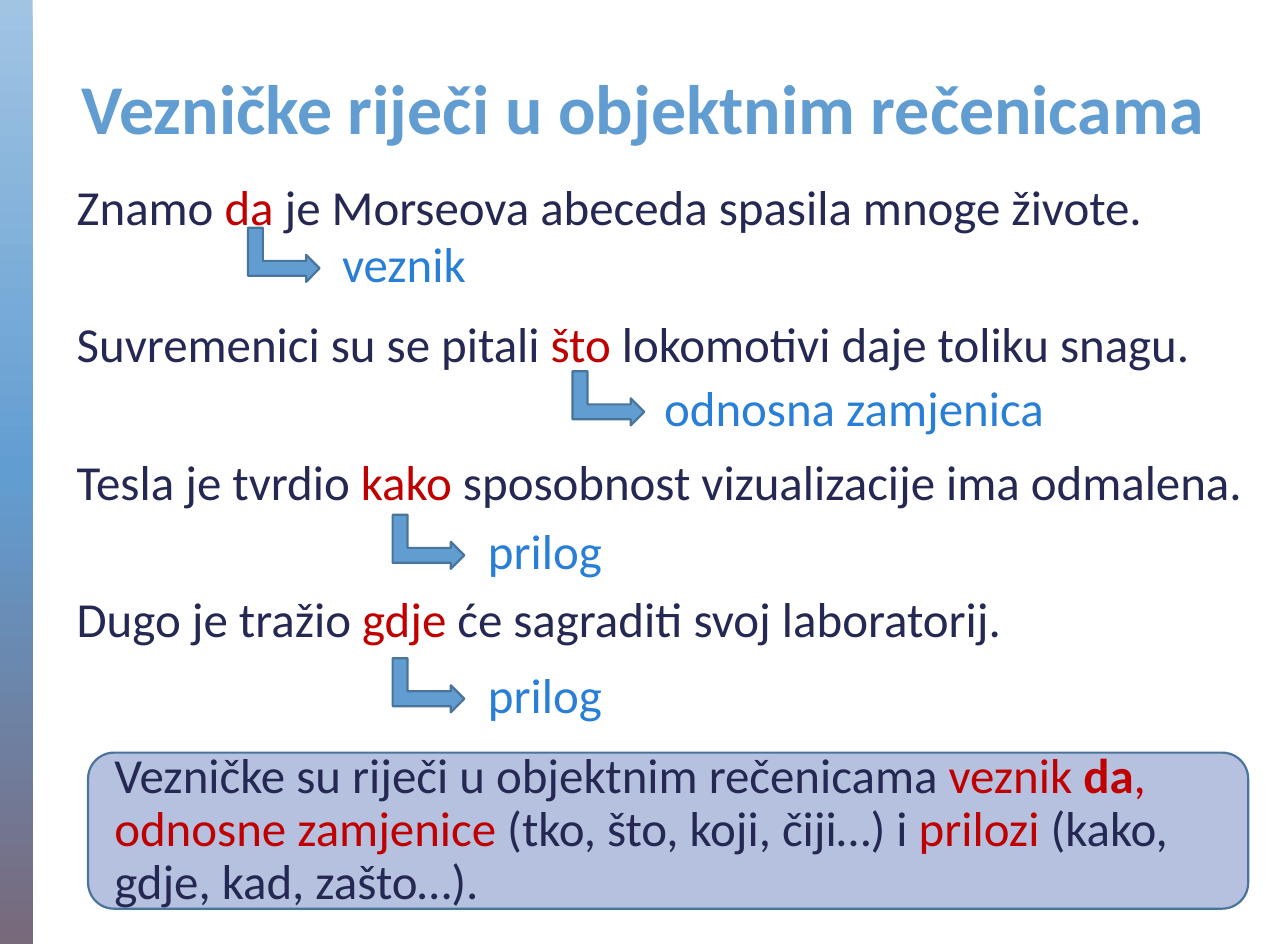
from copy import deepcopy

from pptx import Presentation
from pptx import util as u
from pptx.dml.color import RGBColor
from pptx.enum import shapes, text
from pptx.oxml import ns, xmlchemy

NAVY = RGBColor(0x24, 0x28, 0x52)
RED = RGBColor(0xC0, 0x00, 0x00)
BLUE = RGBColor(0x62, 0x9D, 0xD1)
LABEL_BLUE = RGBColor(0x29, 0x7F, 0xD5)
LINE_BLUE = RGBColor(0x49, 0x74, 0x9B)
PANEL = RGBColor(0xB5, 0xC1, 0xDF)
LIGHT_BLUE = RGBColor(0xA1, 0xC4, 0xE3)
MAUVE = RGBColor(0x78, 0x69, 0x7B)

SENTENCES = [
    ("Znamo ", "da", " je Morseova abeceda spasila mnoge živote."),
    ("Suvremenici su se pitali ", "što", " lokomotivi daje toliku snagu."),
    ("Tesla je tvrdio ", "kako", " sposobnost vizualizacije ima odmalena."),
    ("Dugo je tražio ", "gdje", " će sagraditi svoj laboratorij."),
]
LABELS = [
    (2.04, 2.62, 1.34, "veznik"),
    (4.62, 5.18, 3.32, "odnosna zamjenica"),
    (3.19, 3.78, 1.34, "prilog"),
    (3.19, 3.78, 1.34, "prilog"),
]
FIRST_ARROW_TOP = 1.74
ARROW_STEP = 1.14


def add_text(paragraph, words, color=NAVY, size=28, bold=False):
    run = paragraph.add_run()
    run.text = words
    run.font.name = "Calibri"
    run.font.size = u.Pt(size)
    run.font.bold = bold
    run.font.color.rgb = color


class SlideBuilder:
    def __init__(self, presentation):
        self.slide = presentation.slides.add_slide(presentation.slide_layouts[1])

    def place(self, shape, left, top, width, height):
        shape.left, shape.top = u.Inches(left), u.Inches(top)
        shape.width, shape.height = u.Inches(width), u.Inches(height)

    def frame(self, shape, anchor):
        frame = shape.text_frame
        frame.word_wrap = True
        frame.auto_size = text.MSO_AUTO_SIZE.NONE
        frame.vertical_anchor = anchor
        return frame

    def format_paragraph(self, paragraph, before=0, spacing=1.0, indent=0.0):
        paragraph.alignment = text.PP_ALIGN.LEFT
        paragraph.space_before = u.Pt(before)
        paragraph.line_spacing = spacing
        properties = paragraph._p.get_or_add_pPr()
        properties.set("marL", str(u.Inches(indent)))
        properties.set("indent", "0")
        properties.append(xmlchemy.OxmlElement("a:buNone"))

    def shape(self, kind, left, top, width, height, fill):
        shape = self.slide.shapes.add_shape(
            kind, u.Inches(left), u.Inches(top), u.Inches(width), u.Inches(height))
        shape.shadow.inherit = False
        shape.fill.solid()
        shape.fill.fore_color.rgb = fill
        shape.line.color.rgb = LINE_BLUE
        shape.line.width = u.Pt(1.25)
        return shape

    def side_bar(self):
        bar = self.shape(shapes.MSO_SHAPE.RECTANGLE, 0, 0, 0.26, 7.5, BLUE)
        bar.line.fill.background()
        bar.fill.gradient()
        bar.fill.gradient_angle = 270
        stop_list = bar._element.spPr.find(".//" + ns.qn("a:gsLst"))
        stop_list.append(deepcopy(stop_list[0]))
        colors = (LIGHT_BLUE, BLUE, MAUVE)
        for stop, position, color in zip(bar.fill.gradient_stops, (0, 0.5, 1), colors):
            stop.position = position
            stop.color.rgb = color

    def title(self, words):
        title = self.slide.shapes.title
        self.place(title, 0.55, 0.29, 9.37, 0.94)
        paragraph = self.frame(title, text.MSO_ANCHOR.BOTTOM).paragraphs[0]
        self.format_paragraph(paragraph)
        add_text(paragraph, words, color=BLUE, size=40, bold=True)

    def sentences(self, sentences):
        body = self.slide.placeholders[1]
        self.place(body, 0.46, 1.35, 9.53, 5.75)
        frame = self.frame(body, text.MSO_ANCHOR.TOP)
        for index, (start, conjunction, end) in enumerate(sentences):
            paragraph = frame.add_paragraph() if index else frame.paragraphs[0]
            self.format_paragraph(paragraph, before=45 if index else 0, indent=0.05)
            add_text(paragraph, start)
            add_text(paragraph, conjunction, color=RED)
            add_text(paragraph, end)

    def arrow(self, left, top):
        arrow = self.shape(shapes.MSO_SHAPE.BENT_UP_ARROW, left, top, 0.43, 0.57, BLUE)
        arrow.rotation = 90
        arrow.adjustments[0] = 0.276

    def label(self, left, top, width, words):
        box = self.slide.shapes.add_textbox(
            u.Inches(left), u.Inches(top), u.Inches(width), u.Inches(0.57))
        frame = self.frame(box, text.MSO_ANCHOR.TOP)
        add_text(frame.paragraphs[0], words, color=LABEL_BLUE)

    def summary(self, pieces):
        panel = self.shape(
            shapes.MSO_SHAPE.ROUNDED_RECTANGLE, 0.7, 5.98, 9.22, 1.24, PANEL)
        paragraph = self.frame(panel, text.MSO_ANCHOR.MIDDLE).paragraphs[0]
        self.format_paragraph(paragraph, spacing=0.9, indent=0.05)
        for words, color, bold in pieces:
            add_text(paragraph, words, color=color, bold=bold)


def main():
    presentation = Presentation()
    presentation.slide_width = u.Cm(26)
    presentation.slide_height = u.Inches(7.5)
    builder = SlideBuilder(presentation)
    builder.side_bar()
    builder.title("Vezničke riječi u objektnim rečenicama")
    builder.sentences(SENTENCES)
    for index, (arrow_left, label_left, label_width, words) in enumerate(LABELS):
        top = FIRST_ARROW_TOP + index * ARROW_STEP
        builder.arrow(arrow_left, top)
        builder.label(label_left, top + 0.07, label_width, words)
    builder.summary([
        ("Vezničke su riječi u objektnim rečenicama ", NAVY, False),
        ("veznik ", RED, False),
        ("da", RED, True),
        (", odnosne zamjenice ", RED, False),
        ("(tko, što, koji, čiji…) i ", NAVY, False),
        ("prilozi ", RED, False),
        ("(kako, gdje, kad, zašto…).", NAVY, False),
    ])
    presentation.save("out.pptx")


if __name__ == "__main__":
    main()
